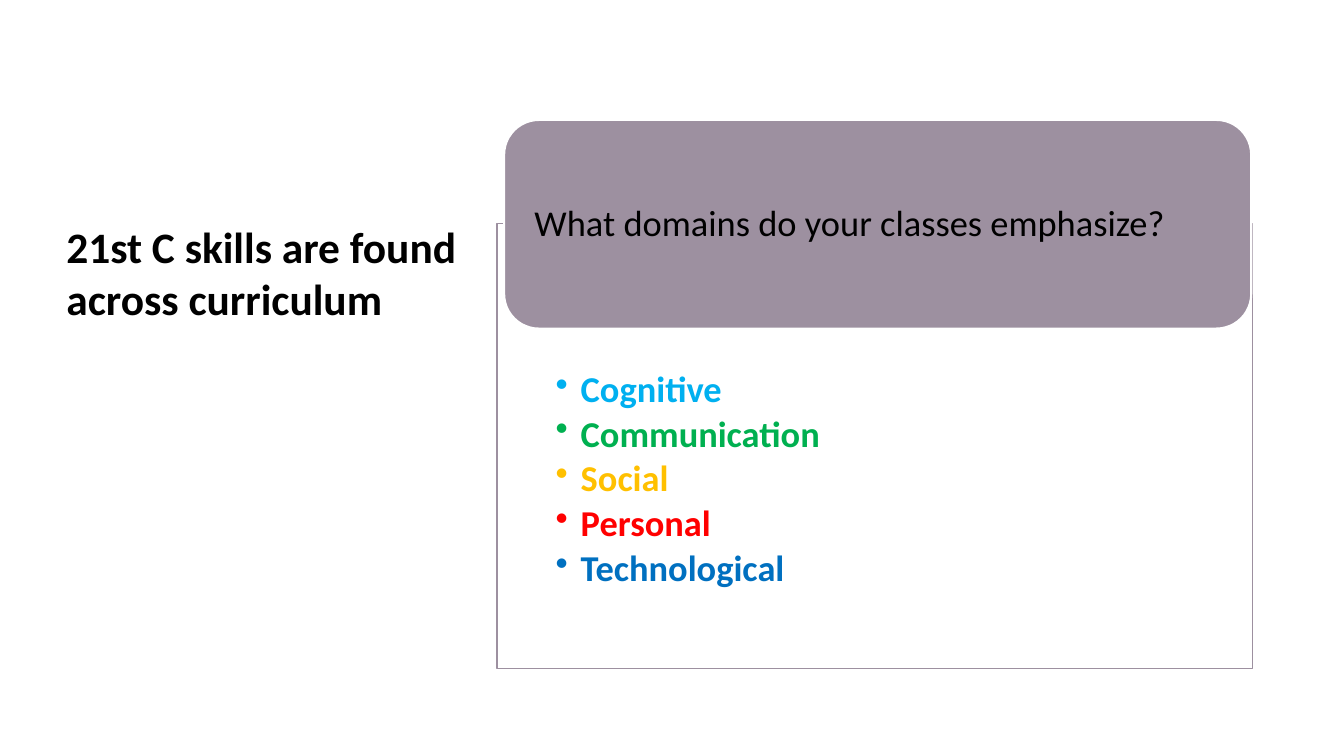
from lxml.etree import SubElement
from pptx import Presentation
from pptx.dml.color import RGBColor
from pptx.enum.shapes import MSO_SHAPE
from pptx.enum.text import MSO_ANCHOR, PP_ALIGN
from pptx.oxml.ns import qn
from pptx.util import Inches, Pt

FONT = "Calibri"
MAUVE = "9D90A0"
WHITE = "FFFFFF"
BLACK = "000000"
DOMAINS = [
    ("Cognitive", "00B0F0"),
    ("Communication", "00B050"),
    ("Social", "FFC000"),
    ("Personal", "FF0000"),
    ("Technological", "0070C0"),
]


def color(value):
    """Turn a hex string into a colour."""
    return RGBColor.from_string(value)


def set_frame(frame, insets, anchor=MSO_ANCHOR.TOP):
    """Set wrapping, insets in inches and vertical anchor of a text frame."""
    frame.word_wrap = True
    frame.vertical_anchor = anchor
    left, top, right, bottom = (Inches(inset) for inset in insets)
    frame.margin_left, frame.margin_top = left, top
    frame.margin_right, frame.margin_bottom = right, bottom


def add_run(paragraph, text, size, text_color, bold=False):
    """Add one formatted run to a left-aligned paragraph."""
    paragraph.alignment = PP_ALIGN.LEFT
    run = paragraph.add_run()
    run.text = text
    run.font.name = FONT
    run.font.size = Pt(size)
    run.font.bold = bold
    run.font.color.rgb = color(text_color)


def add_bullet(paragraph):
    """Give a paragraph a round bullet with a hanging indent."""
    properties = paragraph._p.get_or_add_pPr()
    properties.set("marL", str(Inches(0.25)))
    properties.set("indent", str(-Inches(0.25)))
    SubElement(properties, qn("a:buChar"), char="•")


def add_box(slide, kind, bounds, fill, line, width):
    """Add a filled and outlined preset shape without a shadow."""
    shape = slide.shapes.add_shape(kind, *(Inches(length) for length in bounds))
    shape.shadow.inherit = False
    shape.fill.solid()
    shape.fill.fore_color.rgb = color(fill)
    shape.line.color.rgb = color(line)
    shape.line.width = Pt(width)
    return shape


def set_opacity(shape, percent):
    """Make the solid fill of a shape partly transparent."""
    fill_color = shape._element.spPr.find(qn("a:solidFill")).find(qn("a:srgbClr"))
    SubElement(fill_color, qn("a:alpha"), val=str(percent * 1000))


def add_title(slide, text):
    """Add the bold slide title on the left."""
    bounds = (0.56, 2.13, 4.42, 4.23)
    title = slide.shapes.add_textbox(*(Inches(length) for length in bounds))
    set_frame(title.text_frame, (0.1, 0.05, 0.1, 0.05))
    add_run(title.text_frame.paragraphs[0], text, 31, BLACK, True)


def add_domain_panel(slide, domains):
    """Add the outlined panel with its coloured bullet list."""
    panel = add_box(slide, MSO_SHAPE.RECTANGLE, (4.93, 2.22, 7.49, 4.41), WHITE, MAUVE, 1)
    set_opacity(panel, 90)
    frame = panel.text_frame
    set_frame(frame, (0.58, 1.46, 0.58, 0.2))
    for index, (domain, domain_color) in enumerate(domains):
        paragraph = frame.add_paragraph() if index else frame.paragraphs[0]
        paragraph.line_spacing = 0.9
        paragraph.space_after = Pt(3.9)
        add_bullet(paragraph)
        add_run(paragraph, domain, 26, domain_color, True)


def add_question(slide, text):
    """Add the rounded header that holds the question."""
    header = add_box(
        slide, MSO_SHAPE.ROUNDED_RECTANGLE, (5, 1.19, 7.41, 2.07), MAUVE, WHITE, 1.5
    )
    set_frame(header.text_frame, (0.2, 0, 0.2, 0), MSO_ANCHOR.MIDDLE)
    paragraph = header.text_frame.paragraphs[0]
    paragraph.line_spacing = 0.9
    add_run(paragraph, text, 26, BLACK)


def main():
    """Build and save the slide."""
    presentation = Presentation()
    presentation.slide_width = Inches(13.33)
    presentation.slide_height = Inches(7.5)
    slide = presentation.slides.add_slide(presentation.slide_layouts[6])
    add_title(slide, "21st C skills are found across curriculum")
    add_domain_panel(slide, DOMAINS)
    add_question(slide, "What domains do your classes emphasize?")
    presentation.save("out.pptx")


if __name__ == "__main__":
    main()
